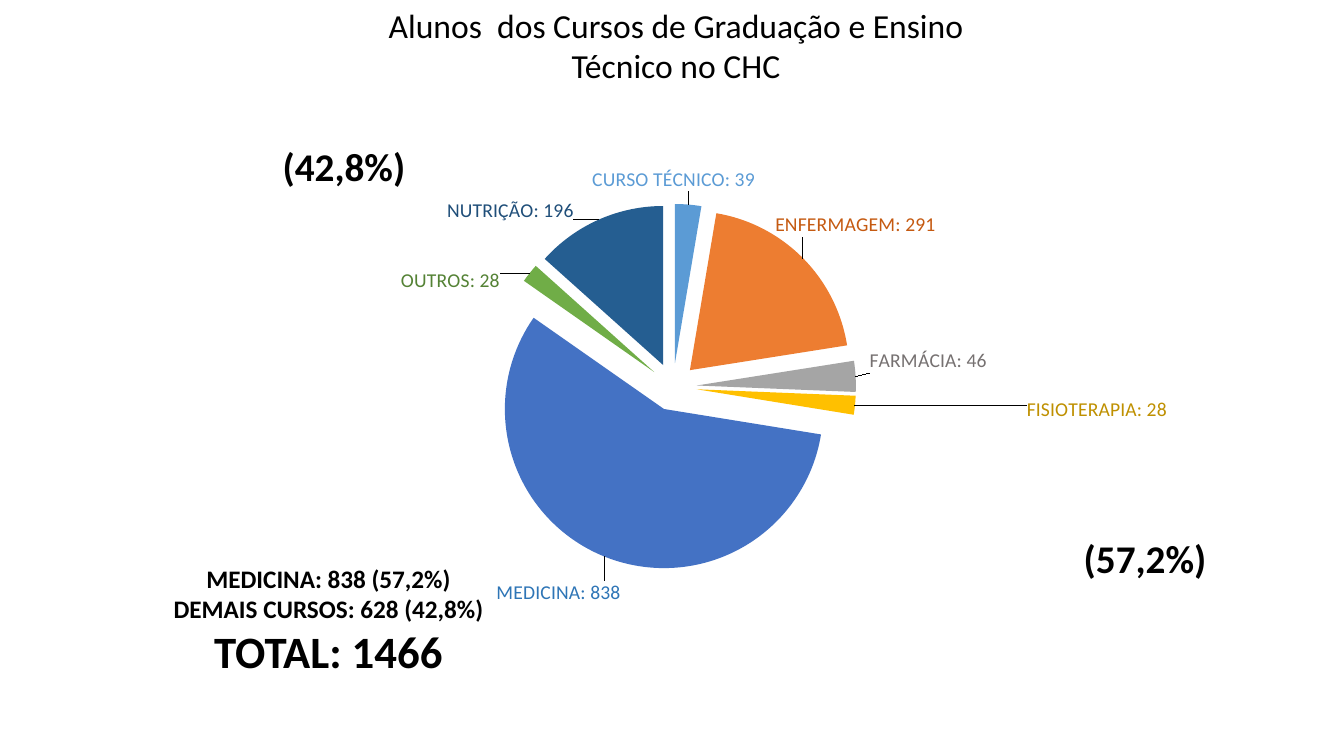
from dataclasses import dataclass

from lxml.etree import SubElement
from pptx import Presentation
from pptx.chart.data import CategoryChartData
from pptx.chart.series import PieSeries
from pptx.dml.color import RGBColor
from pptx.enum.chart import XL_CHART_TYPE as ChartType, XL_LABEL_POSITION as LabelPosition
from pptx.enum.text import MSO_AUTO_SIZE as AutoSize, PP_ALIGN as Align
from pptx.oxml.ns import qn
from pptx.slide import Slide
from pptx.text.text import Font
from pptx.util import Emu, Pt

PX = 914400 / 100.8
CHART_BOX = (140, 160, 1129, 447)
PIE_BOX = (350, 44, 366, 366)
EXPLOSION = 15


@dataclass(frozen=True)
class Line:
    text: str
    size: int
    bold: bool = True


@dataclass(frozen=True)
class TextBox:
    box: tuple[int, int, int, int]
    lines: tuple[Line, ...]
    wrap: bool = True
    auto_size: AutoSize = AutoSize.SHAPE_TO_FIT_TEXT


@dataclass(frozen=True)
class Course:
    name: str
    students: int
    fill: str
    label_color: str
    label_shift: tuple[int, int]


TEXT_BOXES = (
    TextBox((378, 0, 596, 81),
            (Line("Alunos  dos Cursos de Graduação e Ensino Técnico no CHC", 24, False),),
            auto_size=AutoSize.NONE),
    TextBox((163, 558, 331, 125),
            (Line("MEDICINA: 838 (57,2%)", 18),
             Line("DEMAIS CURSOS: 628 (42,8%)", 18),
             Line("TOTAL: 1466", 32))),
    TextBox((269, 137, 150, 57), (Line("(42,8%)", 28),)),
    TextBox((1073, 529, 144, 57), (Line("(57,2%)", 28),), wrap=False),
)

COURSES = (
    Course("CURSO TÉCNICO", 39, "5B9BD5", "5B9BD5", (-15, -7)),
    Course("ENFERMAGEM", 291, "ED7D31", "C55A11", (-32, -17)),
    Course("FARMÁCIA", 46, "A5A5A5", "767171", (8, -15)),
    Course("FISIOTERAPIA", 28, "FFC000", "BF9000", (166, -8)),
    Course("MEDICINA", 838, "4472C4", "2E75B6", (19, 19)),
    Course("OUTROS", 28, "70AD47", "548235", (-25, 23)),
    Course("NUTRIÇÃO", 196, "255E91", "1F4E79", (-22, 8)),
)


def px(value: int) -> Emu:
    """Turn pixels into EMU."""
    return Emu(round(value * PX))


def rgb(color: str) -> RGBColor:
    """Turn a hex string into a colour."""
    return RGBColor.from_string(color)


def set_font(font: Font, size: int, bold: bool = False, color: str = "000000") -> None:
    """Give a font its face, size, weight and colour."""
    values = {"name": "Calibri", "size": Pt(size), "bold": bold}
    for name, value in values.items():
        setattr(font, name, value)
    font.color.rgb = rgb(color)


def add_text(slide: Slide, item: TextBox) -> None:
    """Draw a text box with centred lines."""
    frame = slide.shapes.add_textbox(*map(px, item.box)).text_frame
    for name, value in {"word_wrap": item.wrap, "auto_size": item.auto_size}.items():
        setattr(frame, name, value)
    for index, line in enumerate(item.lines):
        paragraph = frame.add_paragraph() if index else frame.paragraphs[0]
        paragraph.alignment = Align.CENTER
        run = paragraph.add_run()
        run.text = line.text
        set_font(run.font, line.size, line.bold)


def add_layout(parent, position: int, values: dict[str, object]) -> None:
    """Insert a manual layout into a chart element."""
    layout = SubElement(parent, qn("c:layout"))
    manual = SubElement(layout, qn("c:manualLayout"))
    for name, value in values.items():
        SubElement(manual, qn(f"c:{name}")).set("val", str(value))
    parent.insert(position, layout)


def format_slice(series: PieSeries, index: int, course: Course) -> None:
    """Colour a slice and place its label."""
    point = series.points[index]
    point.format.fill.solid()
    point.format.fill.fore_color.rgb = rgb(course.fill)
    label = point.data_label
    set_font(label.font, 14, color=course.label_color)
    label.position = LabelPosition.OUTSIDE_END
    element = series._element.findall(f".//{qn('c:dLbl')}")[index]
    element.find(qn("c:showCatName")).set("val", "1")
    SubElement(element, qn("c:separator")).text = ": "
    shift_x, shift_y = course.label_shift
    add_layout(element, 1, {"x": round(shift_x / CHART_BOX[2], 4),
                            "y": round(shift_y / CHART_BOX[3], 4)})


def add_pie(slide: Slide) -> None:
    """Draw the exploded pie of students by course."""
    data = CategoryChartData()
    data.categories = [course.name for course in COURSES]
    data.add_series("Series 1", [course.students for course in COURSES])
    chart = slide.shapes.add_chart(ChartType.PIE, *map(px, CHART_BOX), data).chart
    for name, value in {"has_title": False, "has_legend": False}.items():
        setattr(chart, name, value)
    set_font(chart.font, 10)
    plot = chart.plots[0]
    plot.vary_by_categories = True
    series = plot.series[0]
    for index, course in enumerate(COURSES):
        format_slice(series, index, course)
    explosion = SubElement(series._element, qn("c:explosion"))
    explosion.set("val", str(EXPLOSION))
    series._element.find(qn("c:tx")).addnext(explosion)

    plot_area = chart._chartSpace.find(f".//{qn('c:plotArea')}")
    for layout in plot_area.findall(qn("c:layout")):
        plot_area.remove(layout)
    left, top, width, height = PIE_BOX
    add_layout(plot_area, 0, {
        "layoutTarget": "inner", "xMode": "edge", "yMode": "edge",
        "x": round(left / CHART_BOX[2], 4), "y": round(top / CHART_BOX[3], 4),
        "w": round(width / CHART_BOX[2], 4), "h": round(height / CHART_BOX[3], 4)})


def main() -> None:
    """Build and save the slide."""
    presentation = Presentation()
    presentation.slide_width, presentation.slide_height = px(1344), px(756)
    slide = presentation.slides.add_slide(presentation.slide_layouts[6])
    for item in TEXT_BOXES:
        add_text(slide, item)
    add_pie(slide)
    presentation.save("out.pptx")


if __name__ == "__main__":
    main()
